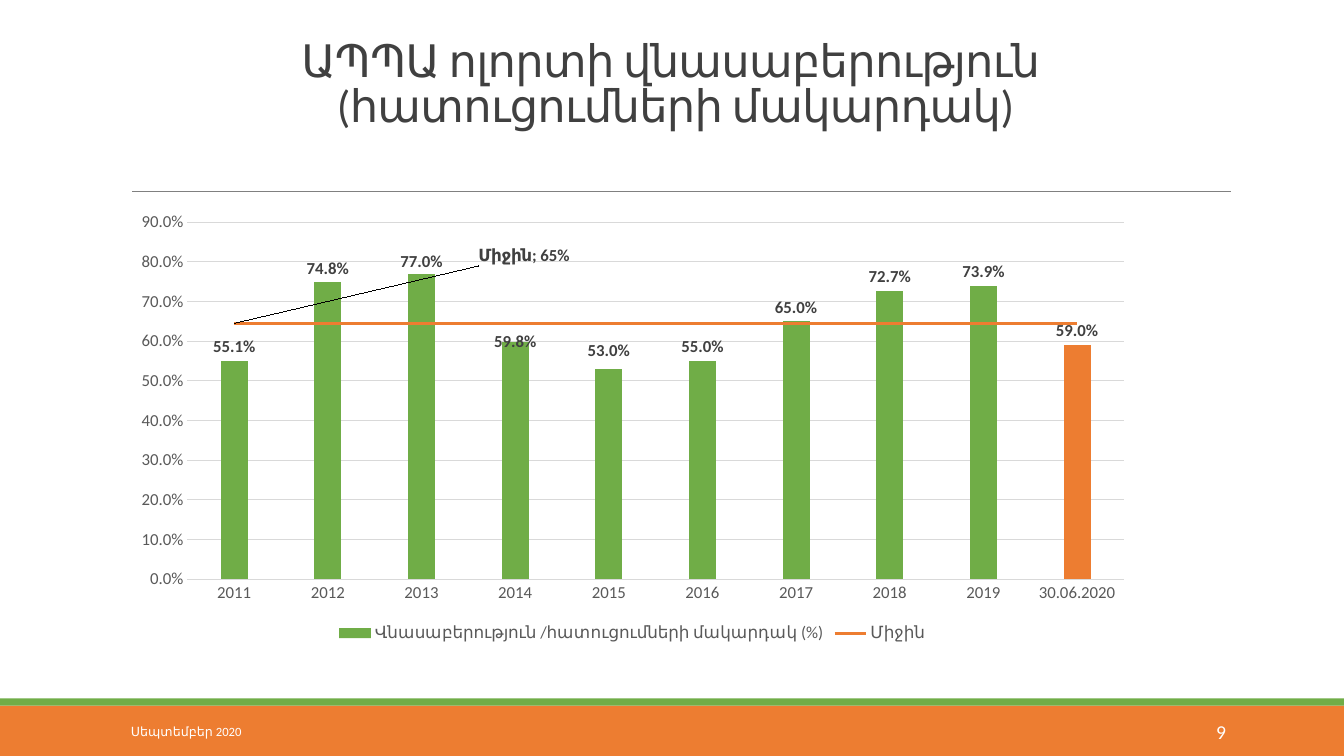
from dataclasses import dataclass

from lxml import etree
from pptx import Presentation
from pptx.chart.data import CategoryChartData
from pptx.dml.color import RGBColor
from pptx.enum.chart import (XL_CHART_TYPE, XL_LABEL_POSITION, XL_LEGEND_POSITION,
                             XL_MARKER_STYLE, XL_TICK_MARK)
from pptx.enum.shapes import MSO_CONNECTOR, MSO_SHAPE
from pptx.enum.text import MSO_ANCHOR, PP_ALIGN
from pptx.oxml import parse_xml
from pptx.oxml.ns import qn
from pptx.util import Inches, Pt


@dataclass(frozen=True)
class Theme:
    """Colours, font and type sizes of the slide."""
    font: str = "Calibri"
    green: str = "70AD47"
    orange: str = "ED7D31"
    dark: str = "404040"
    axis: str = "595959"
    grid: str = "D9D9D9"
    rule: str = "808080"
    white: str = "FFFFFF"
    title: int = 32
    chart: int = 12
    date: int = 9
    number: int = 14


T = Theme()
NS = ('xmlns:c="http://schemas.openxmlformats.org/drawingml/2006/chart" '
      'xmlns:a="http://schemas.openxmlformats.org/drawingml/2006/main"')
YEARS = [str(year) for year in range(2011, 2020)] + ["30.06.2020"]
LOSS_RATIOS = [0.551, 0.748, 0.77, 0.598, 0.53, 0.55, 0.65, 0.727, 0.739, 0.59]
AVERAGE = 0.645
LABEL_SHIFTS = {2: 0.005, 3: 0.03, 4: -0.01}


def rgb(color):
    """Turn a hex string into a colour."""
    return RGBColor.from_string(color)


def style_font(font, size, color, bold=False):
    """Set the face, size, colour and weight of a font."""
    font.name, font.size, font.bold = T.font, Pt(size), bold
    font.color.rgb = rgb(color)


def add_band(s, top, height, color):
    """Add a full-width footer band."""
    sp = s.shapes.add_shape(MSO_SHAPE.RECTANGLE, 0, Inches(top), Inches(13.33), Inches(height))
    sp.shadow.inherit = False
    sp.fill.solid()
    sp.fill.fore_color.rgb = rgb(color)
    sp.line.fill.background()


def add_rule(s):
    """Add the thin line under the title."""
    line = s.shapes.add_connector(MSO_CONNECTOR.STRAIGHT, Inches(1.31), Inches(1.9),
                                  Inches(12.21), Inches(1.9))
    line.line.color.rgb = rgb(T.rule)
    line.line.width = Pt(0.5)
    etree.SubElement(line._element.spPr, qn("a:effectLst"))


def set_title(s, text):
    """Place and format the title placeholder."""
    sp = s.shapes.title
    sp.left, sp.top, sp.width, sp.height = map(Inches, (1.2, 0.31, 11, 1.05))
    tf = sp.text_frame
    tf.text = text
    tf.vertical_anchor = MSO_ANCHOR.BOTTOM
    p = tf.paragraphs[0]
    p.alignment, p.line_spacing = PP_ALIGN.CENTER, 0.85
    for r in p.runs:
        style_font(r.font, T.title, T.dark)
        r.font._element.set("spc", "-50")


def add_footer_text(s, left, width, text, size, align):
    """Add a white text on the footer band."""
    tf = s.shapes.add_textbox(Inches(left), Inches(7.06), Inches(width), Inches(0.4)).text_frame
    tf.text = text
    tf.word_wrap = True
    tf.vertical_anchor = MSO_ANCHOR.MIDDLE
    p = tf.paragraphs[0]
    p.alignment = align
    style_font(p.runs[0].font, size, T.white)


def layout_xml(**values):
    """Return a manual chart layout."""
    parts = "".join(f'<c:{key} val="{value}"/>' for key, value in values.items())
    return f"<c:layout {NS}><c:manualLayout>{parts}</c:manualLayout></c:layout>"


def move_label(labels, index, x, y, position, number_format, named=False):
    """Shift one data label, optionally naming its series."""
    shows = {"LegendKey": 0, "Val": 1, "CatName": 0, "SerName": int(named),
             "Percent": 0, "BubbleSize": 0}
    flags = "".join(f'<c:show{key} val="{value}"/>' for key, value in shows.items())
    label = parse_xml(
        f'<c:dLbl {NS}><c:idx val="{index}"/>{layout_xml(x=x, y=y)}'
        f'<c:numFmt formatCode="{number_format}" sourceLinked="0"/><c:spPr><a:noFill/></c:spPr>'
        f'<c:txPr><a:bodyPr/><a:p><a:pPr><a:defRPr sz="{T.chart * 100}" b="1"><a:solidFill>'
        f'<a:srgbClr val="{T.dark}"/></a:solidFill><a:latin typeface="{T.font}"/></a:defRPr>'
        f'</a:pPr><a:endParaRPr lang="hy-AM"/></a:p></c:txPr><c:dLblPos val="{position}"/>'
        f'{flags}<c:separator>; </c:separator></c:dLbl>')
    others = labels._element.findall(qn("c:dLbl"))
    labels._element.insert(len(others), label)


def remove_all(parent, tag):
    """Remove the direct children that have the tag."""
    for child in parent.findall(qn(tag)):
        parent.remove(child)


def split_line_plot(chart):
    """Move the second series into a line plot on the same axes."""
    bars = chart.plots[0]._element
    ser = bars.findall(qn("c:ser"))[1]
    remove_all(ser, "c:invertIfNegative")
    axes = "".join(f'<c:axId val="{ax.get("val")}"/>' for ax in bars.findall(qn("c:axId")))
    lines = parse_xml(f'<c:lineChart {NS}><c:grouping val="standard"/><c:varyColors val="0"/>'
                      f'<c:marker val="1"/>{axes}</c:lineChart>')
    lines.insert(2, ser)
    bars.addnext(lines)


def style_axes(chart):
    """Format both axes and the gridlines."""
    cat, val = chart.category_axis, chart.value_axis
    for axis in (cat, val):
        axis.major_tick_mark = axis.minor_tick_mark = XL_TICK_MARK.NONE
        style_font(axis.tick_labels.font, T.chart, T.axis)
    val.minimum_scale, val.maximum_scale, val.major_unit = 0, 0.9, 0.1
    val.tick_labels.number_format = "0.0%"
    val.tick_labels.number_format_is_linked = False
    val.format.line.fill.background()
    for line in (cat.format.line, val.major_gridlines.format.line):
        line.color.rgb = rgb(T.grid)
        line.width = Pt(0.75)


def style_bars(plot):
    """Format the yearly bars and their labels."""
    plot.gap_width, plot.overlap, plot.vary_by_categories = 247, -25, False
    bars = plot.series[0]
    bars.invert_if_negative = False
    for part, color in ((bars, T.green), (bars.points[len(YEARS) - 1], T.orange)):
        part.format.fill.solid()
        part.format.fill.fore_color.rgb = rgb(color)
    labels = bars.data_labels
    labels.show_value = True
    labels.number_format, labels.number_format_is_linked = "0.0%", False
    labels.position = XL_LABEL_POSITION.OUTSIDE_END
    style_font(labels.font, T.chart, T.dark, True)
    for index, shift in LABEL_SHIFTS.items():
        move_label(labels, index, 0, shift, "outEnd", "0.0%")


def style_average(series):
    """Format the average line and its single label with a leader."""
    series.smooth = False
    series.marker.style = XL_MARKER_STYLE.NONE
    series.format.line.color.rgb = rgb(T.orange)
    series.format.line.width = Pt(2.25)
    labels = series.data_labels
    labels.show_value = False
    move_label(labels, 0, 0.235, -0.152, "r", "0%", named=True)
    remove_all(labels._element, "c:showLeaderLines")
    labels._element.append(parse_xml(
        f'<c:extLst {NS}><c:ext uri="{{CE6537A1-D6FC-4f65-9D91-7224C49458BB}}" '
        'xmlns:c15="http://schemas.microsoft.com/office/drawing/2012/chart">'
        '<c15:showLeaderLines val="1"/></c:ext></c:extLst>'))


def add_loss_chart(s):
    """Add the loss ratio bars with the average line."""
    data = CategoryChartData(number_format="0.0%")
    data.categories = YEARS
    data.add_series("Վնասաբերություն /հատուցումների մակարդակ (%)", LOSS_RATIOS)
    data.add_series("Միջին", [AVERAGE] * len(YEARS))
    chart = s.shapes.add_chart(XL_CHART_TYPE.COLUMN_CLUSTERED, Inches(1.2), Inches(2.02),
                               Inches(10.14), Inches(4.4), data).chart
    style_font(chart.font, T.chart, T.axis)
    chart.has_title = False
    chart.has_legend = True
    chart.legend.position = XL_LEGEND_POSITION.BOTTOM
    chart.legend.include_in_layout = False
    style_font(chart.legend.font, T.chart, T.axis)
    split_line_plot(chart)
    style_axes(chart)
    style_bars(chart.plots[0])
    style_average(chart.plots[1].series[0])
    area = chart._chartSpace.find(".//" + qn("c:plotArea"))
    remove_all(area, "c:layout")
    area.insert(0, parse_xml(layout_xml(layoutTarget="inner", xMode="edge", yMode="edge",
                                        x=0.065, y=0.042, w=0.916, h=0.805)))


def main():
    """Build the slide and save it."""
    prs = Presentation()
    prs.slide_width, prs.slide_height = Inches(13.33), Inches(7.5)
    s = prs.slides.add_slide(prs.slide_layouts[5])
    add_band(s, 7, 0.5, T.orange)
    add_band(s, 6.93, 0.07, T.green)
    add_rule(s)
    set_title(s, "ԱՊՊԱ ոլորտի վնասաբերություն \v(հատուցումների մակարդակ)")
    add_footer_text(s, 1.2, 2.7, "Սեպտեմբեր 2020", T.date, PP_ALIGN.LEFT)
    add_footer_text(s, 10.83, 1.43, "9", T.number, PP_ALIGN.RIGHT)
    add_loss_chart(s)
    prs.save("out.pptx")


if __name__ == "__main__":
    main()
